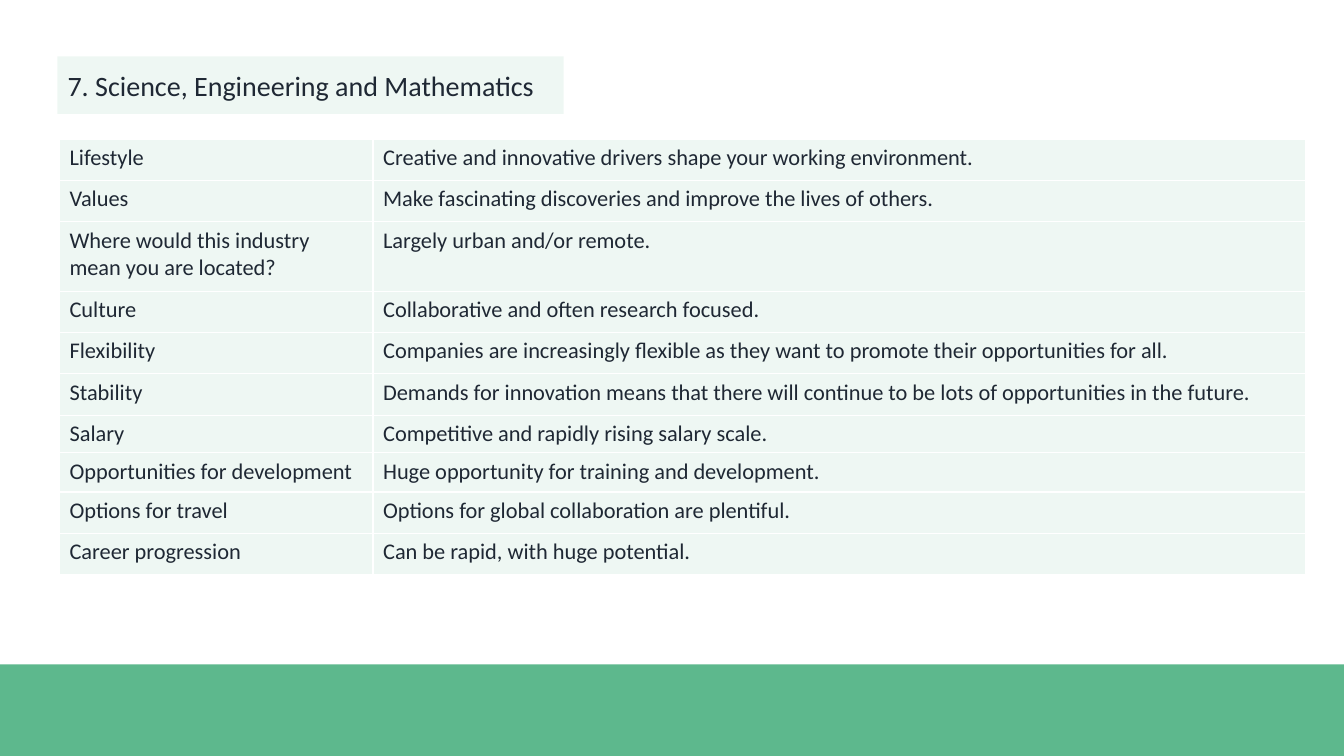
import pptx
import pptx.util
import pptx.dml.color
import pptx.enum.shapes
import pptx.enum.text
import pptx.oxml
import pptx.oxml.ns

Inches = pptx.util.Inches
qn = pptx.oxml.ns.qn

# Content
TITLE = "7. Science, Engineering and Mathematics"
ROWS = [
    ("Lifestyle", "Creative and innovative drivers shape your working environment."),
    ("Values", "Make fascinating discoveries and improve the lives of others."),
    ("Where would this industry mean you are located?", "Largely urban and/or remote."),
    ("Culture", "Collaborative and often research focused."),
    ("Flexibility", "Companies are increasingly flexible as they want to promote their opportunities for all."),
    ("Stability", "Demands for innovation means that there will continue to be lots of opportunities in the future."),
    ("Salary", "Competitive and rapidly rising salary scale."),
    ("Opportunities for development", "Huge opportunity for training and development."),
    ("Options for travel", "Options for global collaboration are plentiful."),
    ("Career progression", "Can be rapid, with huge potential."),
]
WIDTHS = [3.11, 9.25]
HEIGHT = 0.41
SPECIAL = {"Where would this industry mean you are located?": 0.69,
           "Salary": 0.37, "Opportunities for development": 0.39}
COLORS = {"green": "5DB88D", "ink": "1F2834", "white": "FFFFFF"}
FONT = "Calibri"


def rgb(name):
    return pptx.dml.color.RGBColor.from_string(COLORS[name])


def write(frame, text, size=16, color="ink"):
    para = frame.paragraphs[0]
    para.alignment = pptx.enum.text.PP_ALIGN.LEFT
    run = para.add_run()
    run.text = text
    run.font.size = pptx.util.Pt(size)
    run.font.name = FONT
    run.font.color.rgb = rgb(color)


def node(xml):
    ns = pptx.oxml.ns.nsdecls("a")
    return pptx.oxml.parse_xml(xml.replace(">", f" {ns}>", 1))


def tint(fill, props):
    """Fill with green at 10 percent opacity."""
    fill.solid()
    fill.fore_color.rgb = rgb("green")
    color = props.find(qn("a:solidFill")).find(qn("a:srgbClr"))
    color.append(node('<a:alpha val="10000"></a:alpha>'))


def edge(props):
    for i, side in enumerate(("lnL", "lnR", "lnT", "lnB")):
        props.insert(i, node(
            f'<a:{side} w="12700"><a:solidFill><a:srgbClr val="{COLORS["white"]}"/>'
            f'</a:solidFill></a:{side}>'))


def main():
    deck = pptx.Presentation()
    deck.slide_width, deck.slide_height = Inches(13.33), Inches(7.5)
    slide = deck.slides.add_slide(deck.slide_layouts[5])

    # Footer band
    band = slide.shapes.add_shape(pptx.enum.shapes.MSO_SHAPE.RECTANGLE,
                                  0, Inches(6.59), deck.slide_width, Inches(0.91))
    band.shadow.inherit = False
    band.fill.solid()
    band.fill.fore_color.rgb = rgb("green")
    band.line.fill.background()

    # Title pill
    title = slide.shapes.title
    title.left, title.top = Inches(0.57), Inches(0.56)
    title.width, title.height = Inches(5.02), Inches(0.57)
    props = title._element.spPr
    props.append(node('<a:prstGeom prst="roundRect"><a:avLst>'
                      '<a:gd name="adj" fmla="val 50000"/></a:avLst></a:prstGeom>'))
    tint(title.fill, props)
    title.text_frame.vertical_anchor = pptx.enum.text.MSO_ANCHOR.MIDDLE
    title.text_frame.word_wrap = True
    write(title.text_frame, TITLE, size=20)

    # Industry table
    highs = [SPECIAL.get(label, HEIGHT) for label, _ in ROWS]
    table = slide.shapes.add_table(len(ROWS), len(WIDTHS), Inches(0.59), Inches(1.38),
                                   Inches(sum(WIDTHS)), Inches(sum(highs))).table
    table.first_row = table.horz_banding = False
    for col, width in zip(table.columns, WIDTHS):
        col.width = Inches(width)
    for row, high, texts in zip(table.rows, highs, ROWS):
        row.height = Inches(high)
        for cell, text in zip(row.cells, texts):
            write(cell.text_frame, text)
            props = cell._tc.get_or_add_tcPr()
            tint(cell.fill, props)
            edge(props)

    deck.save("out.pptx")


if __name__ == "__main__":
    main()
